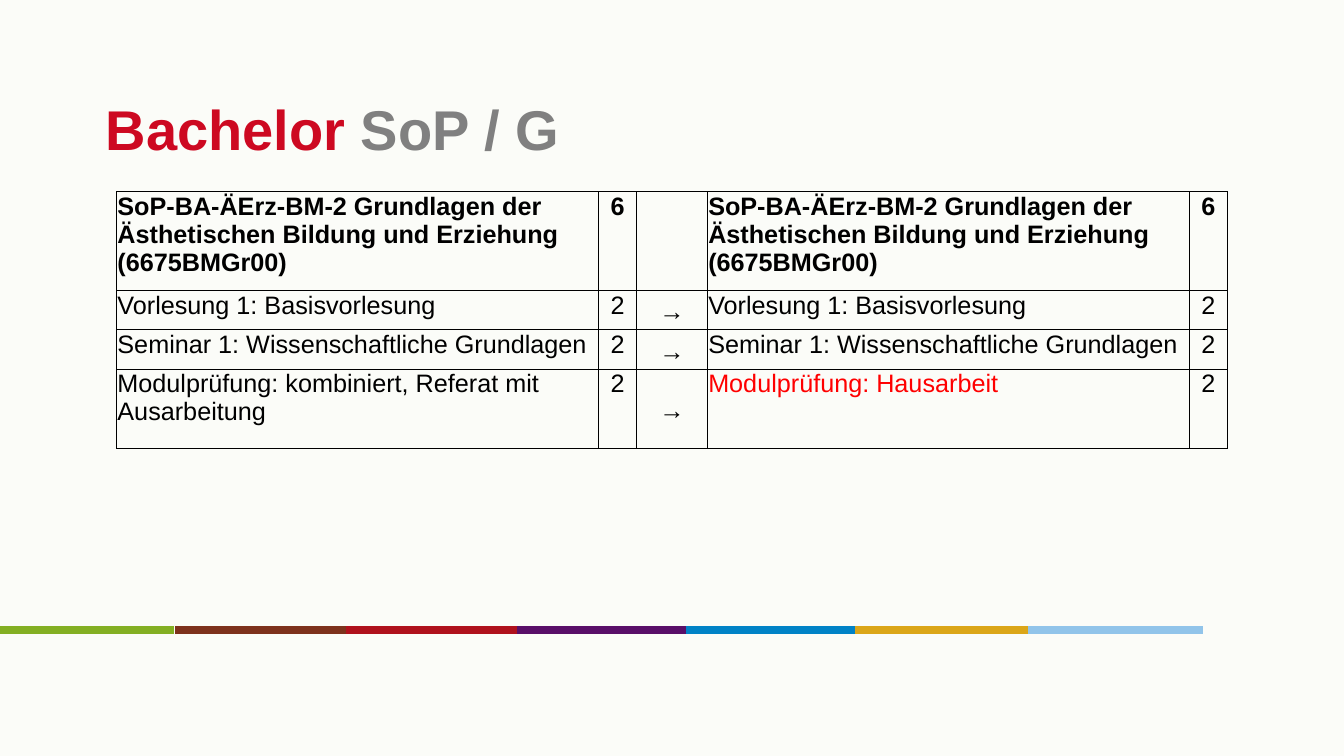
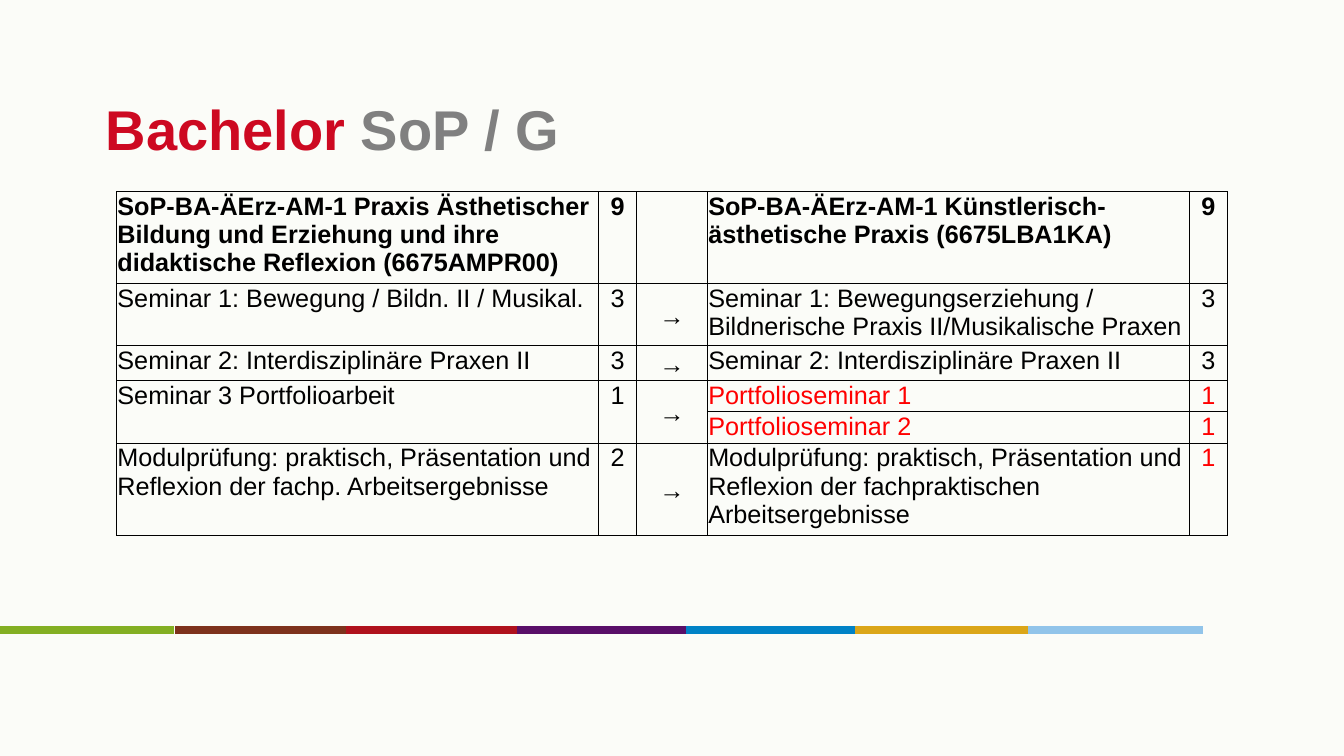
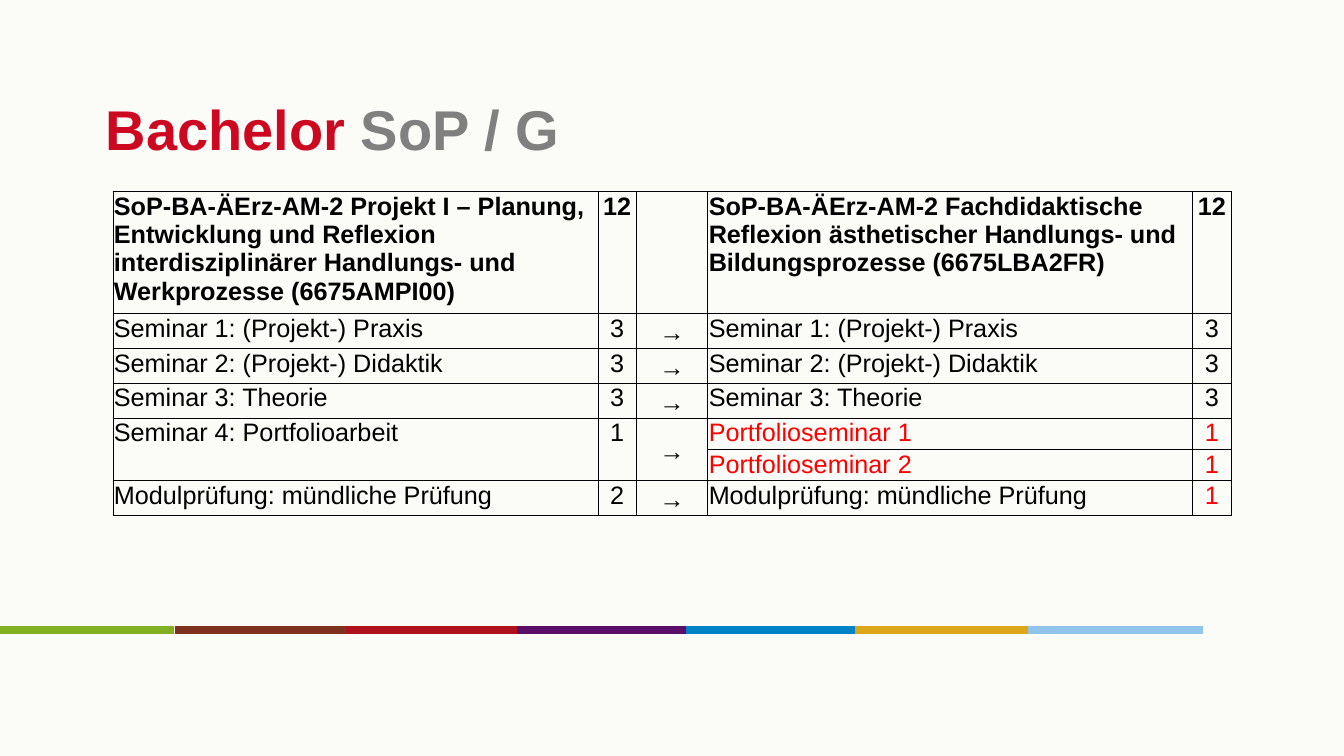
from lxml import etree
from pptx import Presentation
from pptx.dml.color import RGBColor
from pptx.enum.shapes import MSO_CONNECTOR
from pptx.enum.text import MSO_ANCHOR, PP_ALIGN
from pptx.oxml.ns import qn
from pptx.util import Inches, Pt

STRAIGHT = MSO_CONNECTOR.STRAIGHT
TOP, MIDDLE = MSO_ANCHOR.TOP, MSO_ANCHOR.MIDDLE
LEFT, CENTER = PP_ALIGN.LEFT, PP_ALIGN.CENTER

COLORS = {
    "background": "FBFCF8",
    "title": "CD0921",
    "subtitle": "808080",
    "text": "000000",
    "changed": "FF0000",
    "green": "83AF23",
    "brown": "7D321D",
    "red": "AF111D",
    "purple": "590F68",
    "blue": "0082C6",
    "gold": "DBA619",
    "sky": "91C4EA",
}
FONT = "Arial"
SLIDE_WIDTH, SLIDE_HEIGHT = 13.33, 7.5
TABLE_TOP = 1.9
ARROW_COLUMN = 2
STRIPE_Y, STRIPE_LENGTH = 6.25, 1.73
STRIPE_STARTS = {"green": 0, "brown": 1.74, "red": 3.43, "purple": 5.13,
                 "blue": 6.8, "gold": 8.48, "sky": 10.2}


def rgb(color):
    return RGBColor.from_string(COLORS[color])


def write(paragraph, text, size=18, color="text", bold=False):
    """Append a formatted run to the paragraph."""
    run = paragraph.add_run()
    run.text = text
    run.font.name = FONT
    run.font.size = Pt(size)
    run.font.bold = bold
    run.font.color.rgb = rgb(color)


def set_borders(cell, color="text", width=0.5):
    properties = cell._tc.get_or_add_tcPr()
    for position, side in enumerate(("lnL", "lnR", "lnT", "lnB")):
        line = etree.Element(qn(f"a:{side}"), w=str(Pt(width)))
        fill = etree.SubElement(line, qn("a:solidFill"))
        etree.SubElement(fill, qn("a:srgbClr"), val=COLORS[color])
        properties.insert(position, line)


class Deck:
    def __init__(self):
        self.presentation = Presentation()
        self.presentation.slide_width = Inches(SLIDE_WIDTH)
        self.presentation.slide_height = Inches(SLIDE_HEIGHT)
        self.slide = None

    def add_slide(self):
        self.slide = self.presentation.slides.add_slide(
            self.presentation.slide_layouts[6])
        background = self.slide.background.fill
        background.solid()
        background.fore_color.rgb = rgb("background")
        for color, start in STRIPE_STARTS.items():
            self.add_stripe(color, start)
        self.add_title("Bachelor ", "SoP / G")

    def add_stripe(self, color, start):
        stripe = self.slide.shapes.add_connector(
            STRAIGHT, Inches(start), Inches(STRIPE_Y),
            Inches(start + STRIPE_LENGTH), Inches(STRIPE_Y))
        stripe.line.color.rgb = rgb(color)
        stripe.line.width = Pt(5.5)
        etree.SubElement(stripe._element.spPr, qn("a:effectLst"))

    def add_title(self, degree, programme):
        frame = self.slide.shapes.add_textbox(
            Inches(1), Inches(0.65), Inches(11.33), Inches(1.25)).text_frame
        frame.word_wrap = True
        frame.vertical_anchor = MIDDLE
        frame.margin_left = frame.margin_right = Inches(0.05)
        heading = frame.paragraphs[0]
        write(heading, degree, size=40, color="title", bold=True)
        write(heading, programme, size=40, color="subtitle", bold=True)

    def add_comparison(self, rows, heights, widths, changed, split_row=None):
        """Old and new module side by side; split_row is one old entry that became two."""
        left = (SLIDE_WIDTH - sum(widths)) / 2
        table = self.slide.shapes.add_table(
            len(rows), len(widths), Inches(left), Inches(TABLE_TOP),
            Inches(sum(widths)), Inches(sum(heights))).table
        table.first_row = table.horz_banding = False
        for column, width in zip(table.columns, widths):
            column.width = Inches(width)
        for row, height in zip(table.rows, heights):
            row.height = Inches(height)
        for r, (old, old_points, new, new_points) in enumerate(rows):
            arrow = "→" if r and old else ""
            for c, text in enumerate((old, old_points, arrow, new, new_points)):
                color = "changed" if (r, c) in changed else "text"
                self.fill_cell(table.cell(r, c), text, color, r == 0, c)
        if split_row:
            for c in range(ARROW_COLUMN + 1):
                table.cell(split_row, c).merge(table.cell(split_row + 1, c))

    def fill_cell(self, cell, text, color, bold, column):
        is_arrow = column == ARROW_COLUMN
        cell.fill.background()
        set_borders(cell)
        cell.margin_left = cell.margin_right = Inches(0.05 if is_arrow else 0.01)
        cell.margin_top = Inches(0 if is_arrow else 0.01)
        cell.margin_bottom = 0
        cell.vertical_anchor = MIDDLE if is_arrow else TOP
        paragraph = cell.text_frame.paragraphs[0]
        paragraph.alignment = LEFT if column in (0, 3) else CENTER
        if is_arrow:
            paragraph.line_spacing = 1.15
        if text:
            write(paragraph, text, color=color, bold=bold)


def main():
    deck = Deck()
    widths = (4.78, 0.38, 0.7, 4.78, 0.38)

    deck.add_slide()
    basics = "SoP-BA-ÄErz-BM-2 Grundlagen der Ästhetischen Bildung und Erziehung (6675BMGr00)"
    lecture = "Vorlesung 1: Basisvorlesung"
    seminar = "Seminar 1: Wissenschaftliche Grundlagen"
    deck.add_comparison(
        [(basics, "6", basics, "6"),
         (lecture, "2", lecture, "2"),
         (seminar, "2", seminar, "2"),
         ("Modulprüfung: kombiniert, Referat mit Ausarbeitung", "2",
          "Modulprüfung: Hausarbeit", "2")],
        heights=(0.98, 0.39, 0.39, 0.79), widths=widths, changed={(3, 3)})

    deck.add_slide()
    practice = "Seminar 2: Interdisziplinäre Praxen II"
    deck.add_comparison(
        [("SoP-BA-ÄErz-AM-1 Praxis Ästhetischer Bildung und Erziehung und ihre "
          "didaktische Reflexion (6675AMPR00)", "9",
          "SoP-BA-ÄErz-AM-1 Künstlerisch-ästhetische Praxis (6675LBA1KA)", "9"),
         ("Seminar 1: Bewegung / Bildn. II / Musikal.", "3",
          "Seminar 1: Bewegungserziehung / Bildnerische Praxis II/Musikalische Praxen", "3"),
         (practice, "3", practice, "3"),
         ("Seminar 3 Portfolioarbeit", "1", "Portfolioseminar 1", "1"),
         ("", "", "Portfolioseminar 2", "1"),
         ("Modulprüfung: praktisch, Präsentation und Reflexion der fachp. "
          "Arbeitsergebnisse", "2",
          "Modulprüfung: praktisch, Präsentation und Reflexion der fachpraktischen "
          "Arbeitsergebnisse", "1")],
        heights=(0.85, 0.62, 0.32, 0.29, 0.29, 0.85), widths=widths,
        changed={(3, 3), (3, 4), (4, 3), (4, 4), (5, 4)}, split_row=3)

    deck.add_slide()
    seminars = ("Seminar 1: (Projekt-) Praxis", "Seminar 2: (Projekt-) Didaktik",
                "Seminar 3: Theorie")
    exam = "Modulprüfung: mündliche Prüfung"
    deck.add_comparison(
        [("SoP-BA-ÄErz-AM-2 Projekt I – Planung, Entwicklung und Reflexion "
          "interdisziplinärer Handlungs- und Werkprozesse (6675AMPI00)", "12",
          "SoP-BA-ÄErz-AM-2 Fachdidaktische Reflexion ästhetischer Handlungs- und "
          "Bildungsprozesse (6675LBA2FR)", "12"),
         *[(name, "3", name, "3") for name in seminars],
         ("Seminar 4: Portfolioarbeit", "1", "Portfolioseminar 1", "1"),
         ("", "", "Portfolioseminar 2", "1"),
         (exam, "2", exam, "1")],
        heights=(1.13, 0.32, 0.32, 0.32, 0.29, 0.29, 0.32),
        widths=(4.81, 0.38, 0.71, 4.81, 0.38),
        changed={(4, 3), (4, 4), (5, 3), (5, 4), (6, 4)}, split_row=4)

    deck.presentation.save("out.pptx")


if __name__ == "__main__":
    main()
